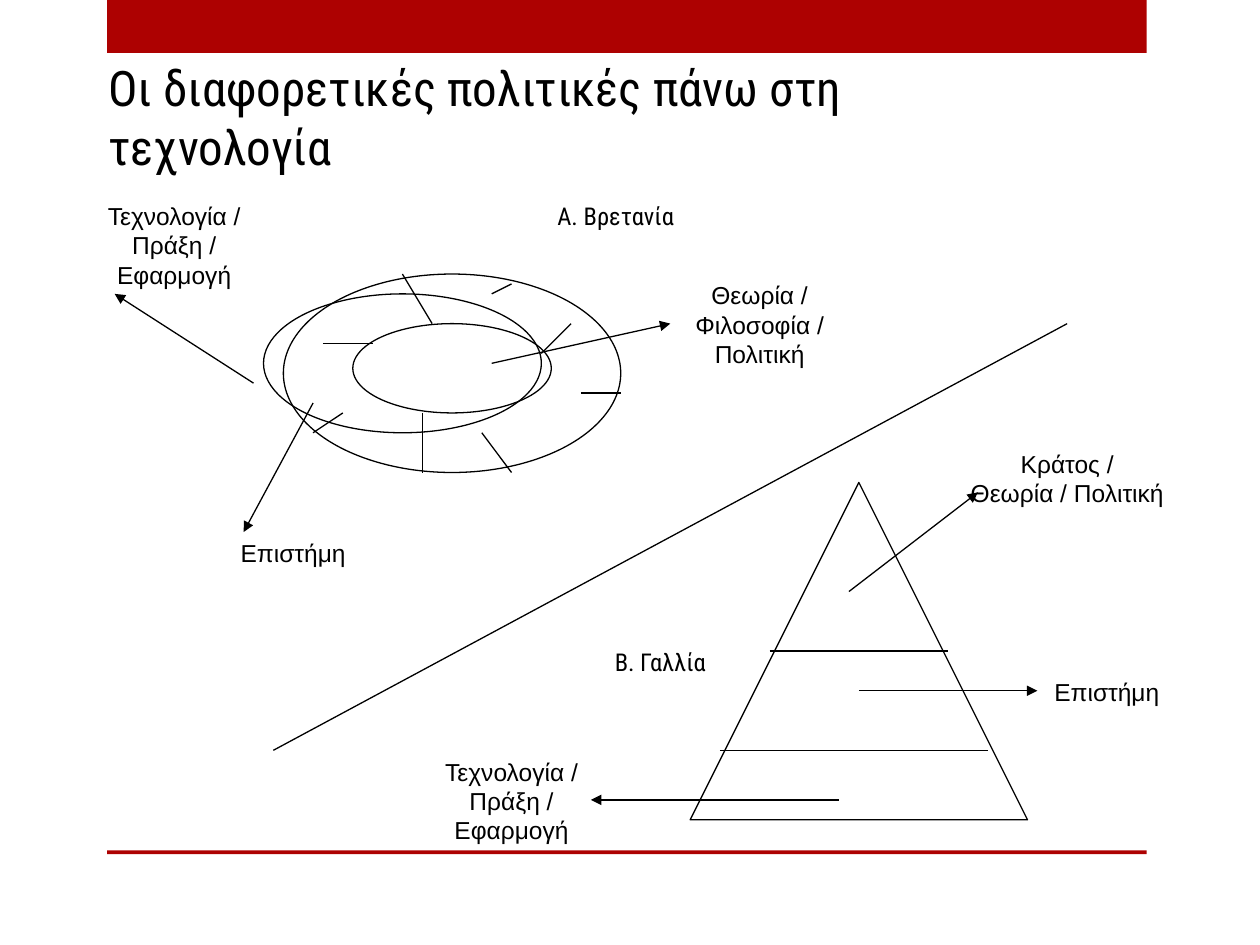
from dataclasses import dataclass

from lxml.etree import SubElement
from pptx import Presentation
from pptx.dml.color import RGBColor
from pptx.enum.shapes import MSO_CONNECTOR, MSO_SHAPE
from pptx.enum.text import MSO_ANCHOR, MSO_AUTO_SIZE, PP_ALIGN
from pptx.oxml.ns import qn
from pptx.slide import Slide
from pptx.text.text import TextFrame
from pptx.util import Inches, Length, Pt

BLACK, RED = "000000", "AD0101"
BODY_FONT, HEADING_FONT = "Arial", "Roboto Condensed"
CELL = 6.3 / 80
GRID_LEFT, GRID_TOP = 2.17, 2.175


@dataclass(frozen=True)
class Outline:
    """A hollow shape placed in grid columns and rows."""
    kind: MSO_SHAPE
    column: int
    row: int
    columns: int
    rows: int


@dataclass(frozen=True)
class Stroke:
    """A line between two grid points, with an optional arrowhead at its end."""
    start: tuple[int, int]
    end: tuple[int, int]
    arrow: bool = False


@dataclass(frozen=True)
class Label:
    """A centred caption placed in grid columns and rows."""
    text: str
    column: int
    row: int
    columns: int = 22
    rows: int = 10
    font: str = BODY_FONT


OUTLINES = [
    Outline(MSO_SHAPE.OVAL, -1, 2, 28, 14),
    Outline(MSO_SHAPE.OVAL, 8, 5, 20, 9),
    Outline(MSO_SHAPE.OVAL, 1, 0, 34, 20),
    Outline(MSO_SHAPE.ISOSCELES_TRIANGLE, 42, 21, 34, 34),
]
DIVIDER = [Stroke((0, 48), (80, 5))]
RING_TICKS = [
    Stroke((4, 16), (7, 14)),
    Stroke((21, 16), (24, 20)),
    Stroke((13, 0), (16, 5)),
    Stroke((5, 7), (10, 7)),
    Stroke((27, 8), (30, 5)),
    Stroke((31, 12), (35, 12)),
    Stroke((15, 14), (15, 20)),
    Stroke((24, 1), (22, 2)),
]
PYRAMID_LEVELS = [Stroke((45, 48), (72, 48)), Stroke((50, 38), (68, 38))]
ARROWS = [
    Stroke((4, 13), (-3, 26), True),
    Stroke((-2, 11), (-16, 2), True),
    Stroke((22, 9), (40, 5), True),
    Stroke((58, 32), (71, 22), True),
    Stroke((59, 42), (77, 42), True),
    Stroke((57, 53), (32, 53), True),
]
LABELS = [
    Label("Θεωρία / Φιλοσοφία / Πολιτική", 38, 0),
    Label("Επιστήμη", 75, 40, 18, 4),
    Label("Τεχνολογία / Πράξη / Εφαρμογή", -21, -8),
    Label("Κράτος / Θεωρία / Πολιτική", 69, 17, rows=7),
    Label("Επιστήμη", -7, 26, 18, 4),
    Label("Τεχνολογία / Πράξη / Εφαρμογή", 13, 48),
    Label("Α. Βρετανία", 22, -8, 25, 4, HEADING_FONT),
    Label("Β. Γαλλία", 27, 37, 24, 4, HEADING_FONT),
]


def color(value: str) -> RGBColor:
    """Turn a hex string into a colour."""
    return RGBColor.from_string(value)


def grid_point(column: float, row: float) -> tuple[Length, Length]:
    """Locate a grid point on the slide."""
    return Inches(GRID_LEFT + column * CELL), Inches(GRID_TOP + row * CELL)


def grid_box(item: Outline | Label) -> tuple[Length, ...]:
    """Give left, top, width and height of a grid item."""
    return (*grid_point(item.column, item.row),
            Inches(item.columns * CELL), Inches(item.rows * CELL))


def write(frame: TextFrame, text: str, size: int, font: str, alignment: PP_ALIGN) -> None:
    """Write one formatted paragraph into a text frame."""
    frame.word_wrap = True
    paragraph = frame.paragraphs[0]
    paragraph.alignment = alignment
    run = paragraph.add_run()
    run.text = text
    for name, value in {"size": Pt(size), "name": font}.items():
        setattr(run.font, name, value)
    run.font.color.rgb = color(BLACK)


def draw_bar(slide: Slide, top: float, height: float) -> None:
    """Draw a red bar across the content width."""
    shape = slide.shapes.add_shape(
        MSO_SHAPE.RECTANGLE, Inches(0.85), Inches(top), Inches(8.25), Inches(height))
    shape.shadow.inherit = False
    shape.fill.solid()
    shape.fill.fore_color.rgb = color(RED)
    shape.line.fill.background()


def draw_title(slide: Slide, text: str) -> None:
    """Place and format the title placeholder."""
    title = slide.shapes.title
    places = {"left": 0.76, "top": -0.31, "width": 7.42, "height": 1.75}
    for name, value in places.items():
        setattr(title, name, Inches(value))
    frame = title.text_frame
    settings = {"auto_size": MSO_AUTO_SIZE.NONE, "vertical_anchor": MSO_ANCHOR.BOTTOM}
    for name, value in settings.items():
        setattr(frame, name, value)
    write(frame, text, 28, HEADING_FONT, PP_ALIGN.LEFT)


def draw_outline(slide: Slide, outline: Outline) -> None:
    """Draw a hollow shape with a thin black line."""
    shape = slide.shapes.add_shape(outline.kind, *grid_box(outline))
    shape.shadow.inherit = False
    shape.fill.background()
    shape.line.color.rgb = color(BLACK)
    shape.line.width = Pt(0.75)


def draw_stroke(slide: Slide, stroke: Stroke) -> None:
    """Draw a thin black line or arrow."""
    connector = slide.shapes.add_connector(
        MSO_CONNECTOR.STRAIGHT, *grid_point(*stroke.start), *grid_point(*stroke.end))
    connector.line.color.rgb = color(BLACK)
    connector.line.width = Pt(0.75)
    properties = connector.element.spPr
    if stroke.arrow:
        SubElement(properties.find(qn("a:ln")), qn("a:tailEnd"), type="triangle")
    SubElement(properties, qn("a:effectLst"))


def draw_label(slide: Slide, label: Label) -> None:
    """Draw a centred caption."""
    frame = slide.shapes.add_textbox(*grid_box(label)).text_frame
    write(frame, label.text, 14, label.font, PP_ALIGN.CENTER)
    frame.auto_size = MSO_AUTO_SIZE.SHAPE_TO_FIT_TEXT


def main() -> None:
    """Build the slide and save it."""
    presentation = Presentation()
    presentation.slide_width, presentation.slide_height = Inches(10), Inches(7.5)
    slide = presentation.slides.add_slide(presentation.slide_layouts.get_by_name("Title Only"))
    draw_bar(slide, 0, 0.42)
    draw_bar(slide, 6.75, 0.03)
    draw_title(slide, "Οι διαφορετικές πολιτικές πάνω στη τεχνολογία")
    for outline in OUTLINES:
        draw_outline(slide, outline)
    for stroke in DIVIDER + RING_TICKS + PYRAMID_LEVELS + ARROWS:
        draw_stroke(slide, stroke)
    for label in LABELS:
        draw_label(slide, label)
    presentation.save("out.pptx")


if __name__ == "__main__":
    main()
